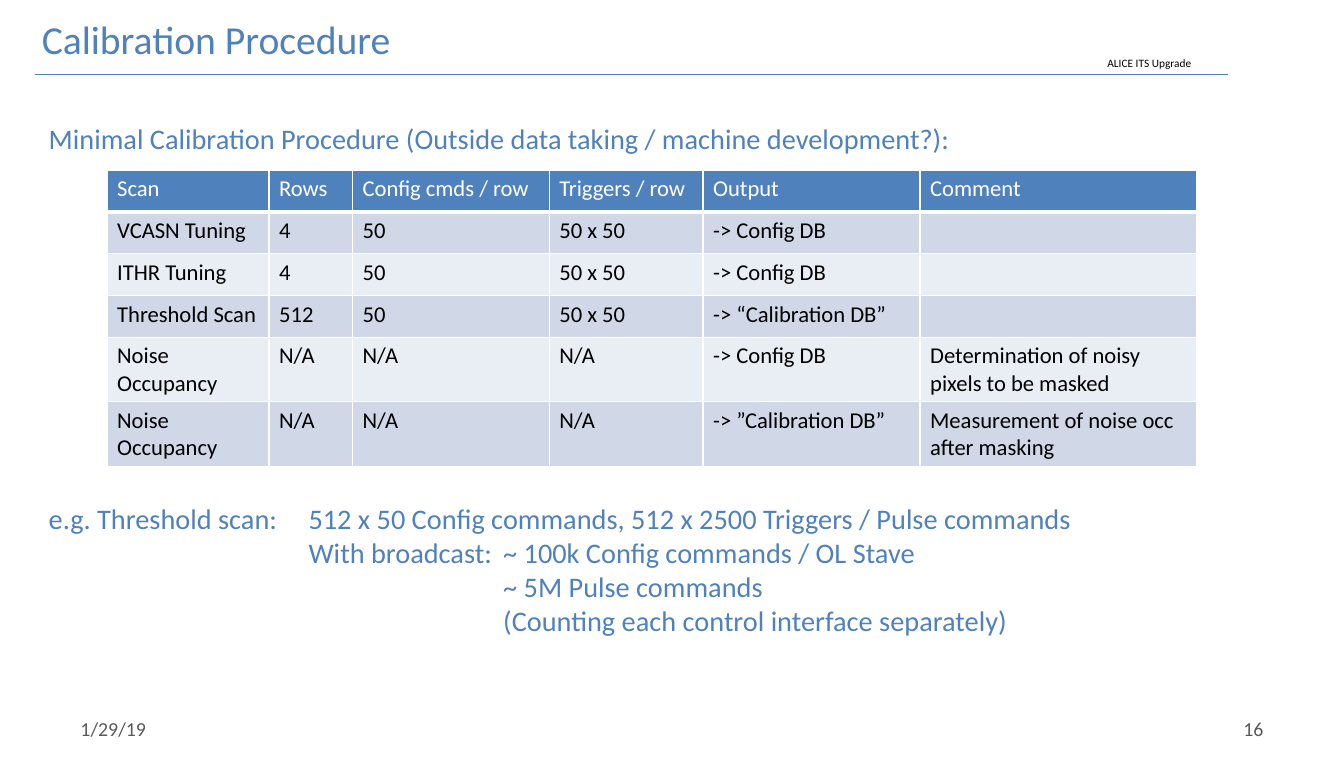
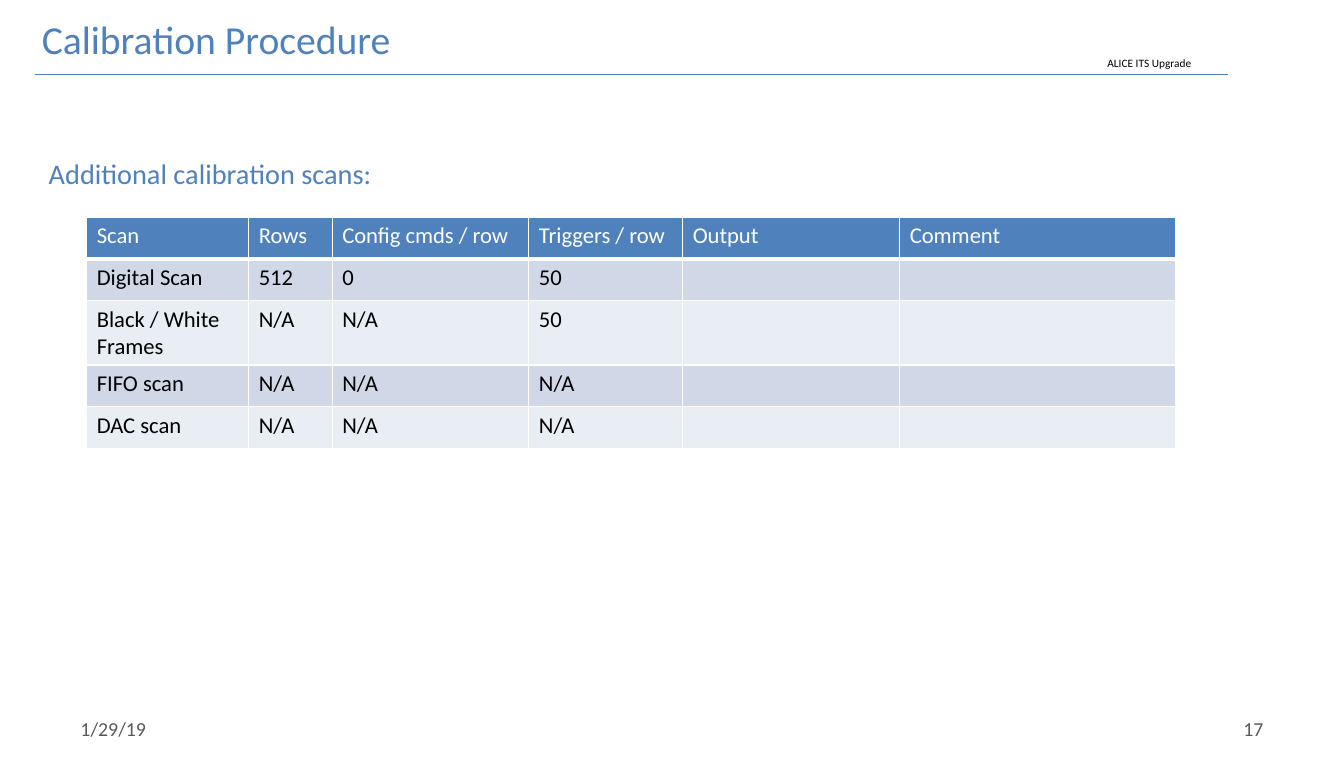
from lxml import etree
from pptx import Presentation, util as u
from pptx.dml.color import RGBColor
from pptx.enum import shapes, text
from pptx.oxml import ns

COLORS = {
    "accent": "4F81BD",
    "black": "000000",
    "white": "FFFFFF",
    "footer": "595959",
    "band_dark": "D0D8E8",
    "band_light": "E9EDF4",
}
FONT = "Calibri"
HEADER = ["Scan", "Rows", "Config cmds / row", "Triggers / row", "Output", "Comment"]
COLUMN_WIDTHS = [1.59, 0.82, 1.93, 1.51, 2.13, 2.71]
ROW_HEIGHT = 0.41
TAB_STOPS = [2.55, 4.46]

slides = [
    {
        "number": "16",
        "heading": "Minimal Calibration Procedure (Outside data taking / machine development?):",
        "heading_top": 1.14,
        "table_at": (1.05, 1.67),
        "rows": [
            ["VCASN Tuning", "4", "50", "50 x 50", "-> Config DB", ""],
            ["ITHR Tuning", "4", "50", "50 x 50", "-> Config DB", ""],
            ["Threshold Scan", "512", "50", "50 x 50", "-> “Calibration DB”", ""],
            ["Noise Occupancy", "N/A", "N/A", "N/A", "-> Config DB",
             "Determination of noisy pixels to be masked"],
            ["Noise Occupancy", "N/A", "N/A", "N/A", "-> ”Calibration DB”",
             "Measurement of noise occ after masking"],
        ],
        "example": [
            (0, "e.g. Threshold scan:\t512 x 50 Config commands, 512 x 2500 Triggers / Pulse commands"),
            (0, "\tWith broadcast:\t~ 100k Config commands / OL Stave"),
            (TAB_STOPS[1], "~ 5M Pulse commands"),
            (TAB_STOPS[1], "(Counting each control interface separately)"),
        ],
    },
    {
        "number": "17",
        "heading": "Additional calibration scans:",
        "heading_top": 1.48,
        "table_at": (0.85, 2.13),
        "rows": [
            ["Digital Scan", "512", "0", "50", "", ""],
            ["Black / White Frames", "N/A", "N/A", "50", "", ""],
            ["FIFO scan", "N/A", "N/A", "N/A", "", ""],
            ["DAC scan", "N/A", "N/A", "N/A", "", ""],
        ],
        "example": [],
    },
]


def add_run(paragraph, content, size, color):
    run = paragraph.add_run()
    run.text = content
    run.font.name = FONT
    run.font.size = u.Pt(size)
    run.font.color.rgb = RGBColor.from_string(COLORS[color])


def add_box(slide, left, top, width, height):
    frame = slide.shapes.add_textbox(
        u.Inches(left), u.Inches(top), u.Inches(width), u.Inches(height)
    ).text_frame
    frame.word_wrap = True
    return frame


presentation = Presentation()
presentation.slide_width = u.Inches(13.19)
presentation.slide_height = u.Inches(7.5)
title_only = presentation.slide_layouts[5]

for content in slides:
    slide = presentation.slides.add_slide(title_only)

    rule = slide.shapes.add_connector(
        shapes.MSO_CONNECTOR.STRAIGHT,
        u.Inches(0.34), u.Inches(0.73), u.Inches(12.05), u.Inches(0.73),
    )
    rule.line.color.rgb = RGBColor.from_string(COLORS["accent"])
    rule.line.width = u.Pt(0.75)
    etree.SubElement(rule._element.spPr, ns.qn("a:effectLst"))

    project = add_box(slide, 10.77, 0.5, 1.03, 0.24)
    project.word_wrap = False
    add_run(project.paragraphs[0], "ALICE ITS Upgrade", 8, "black")

    title = slide.shapes.title
    title.left, title.top = u.Inches(0.31), u.Inches(0.1)
    title.width, title.height = u.Inches(3.66), u.Inches(0.57)
    title.text_frame.word_wrap = False
    title.text_frame.auto_size = text.MSO_AUTO_SIZE.NONE
    title.text_frame.vertical_anchor = text.MSO_ANCHOR.TOP
    title.text_frame.paragraphs[0].alignment = text.PP_ALIGN.LEFT
    add_run(title.text_frame.paragraphs[0], "Calibration Procedure", 28, "accent")

    heading = add_box(slide, 0.38, content["heading_top"], 11.62, 0.43)
    add_run(heading.paragraphs[0], content["heading"], 20, "accent")

    footers = [
        (0.66, "1/29/19", text.PP_ALIGN.LEFT),
        (9.45, content["number"], text.PP_ALIGN.RIGHT),
    ]
    for left, label, alignment in footers:
        footer = add_box(slide, left, 6.95, 3.08, 0.4)
        footer.vertical_anchor = text.MSO_ANCHOR.MIDDLE
        footer.margin_left = footer.margin_right = u.Inches(0.13)
        footer.margin_top = footer.margin_bottom = u.Inches(0.06)
        footer.paragraphs[0].alignment = alignment
        add_run(footer.paragraphs[0], label, 14, "footer")

    rows = [HEADER] + content["rows"]
    left, top = content["table_at"]
    table = slide.shapes.add_table(
        len(rows), len(HEADER), u.Inches(left), u.Inches(top),
        u.Inches(sum(COLUMN_WIDTHS)), u.Inches(ROW_HEIGHT * len(rows)),
    ).table
    for column, width in zip(table.columns, COLUMN_WIDTHS):
        column.width = u.Inches(width)
    for row_index, values in enumerate(rows):
        table.rows[row_index].height = u.Inches(ROW_HEIGHT)
        is_header = row_index == 0
        band = "accent" if is_header else "band_dark" if row_index % 2 else "band_light"
        border_widths = {
            "lnL": 1,
            "lnR": 1,
            "lnT": 3 if row_index == 1 else 1,
            "lnB": 3 if is_header else 1,
        }
        for column_index, value in enumerate(values):
            cell = table.cell(row_index, column_index)
            properties = cell._tc.get_or_add_tcPr()
            for side, points in border_widths.items():
                border = etree.SubElement(properties, ns.qn("a:" + side), w=str(u.Pt(points)))
                fill = etree.SubElement(border, ns.qn("a:solidFill"))
                etree.SubElement(fill, ns.qn("a:srgbClr"), val=COLORS["white"])
            cell.fill.solid()
            cell.fill.fore_color.rgb = RGBColor.from_string(COLORS[band])
            if value:
                add_run(cell.text_frame.paragraphs[0], value, 16,
                        "white" if is_header else "black")

    if content["example"]:
        example = add_box(slide, 0.38, 4.87, 11.62, 1.45)
        for index, (indent, line) in enumerate(content["example"]):
            paragraph = example.add_paragraph() if index else example.paragraphs[0]
            properties = paragraph._p.get_or_add_pPr()
            if indent:
                properties.set("marL", str(u.Inches(indent)))
            else:
                tabs = etree.SubElement(properties, ns.qn("a:tabLst"))
                for stop in TAB_STOPS:
                    etree.SubElement(tabs, ns.qn("a:tab"), pos=str(u.Inches(stop)), algn="l")
            add_run(paragraph, line, 20, "accent")

presentation.save("out.pptx")
